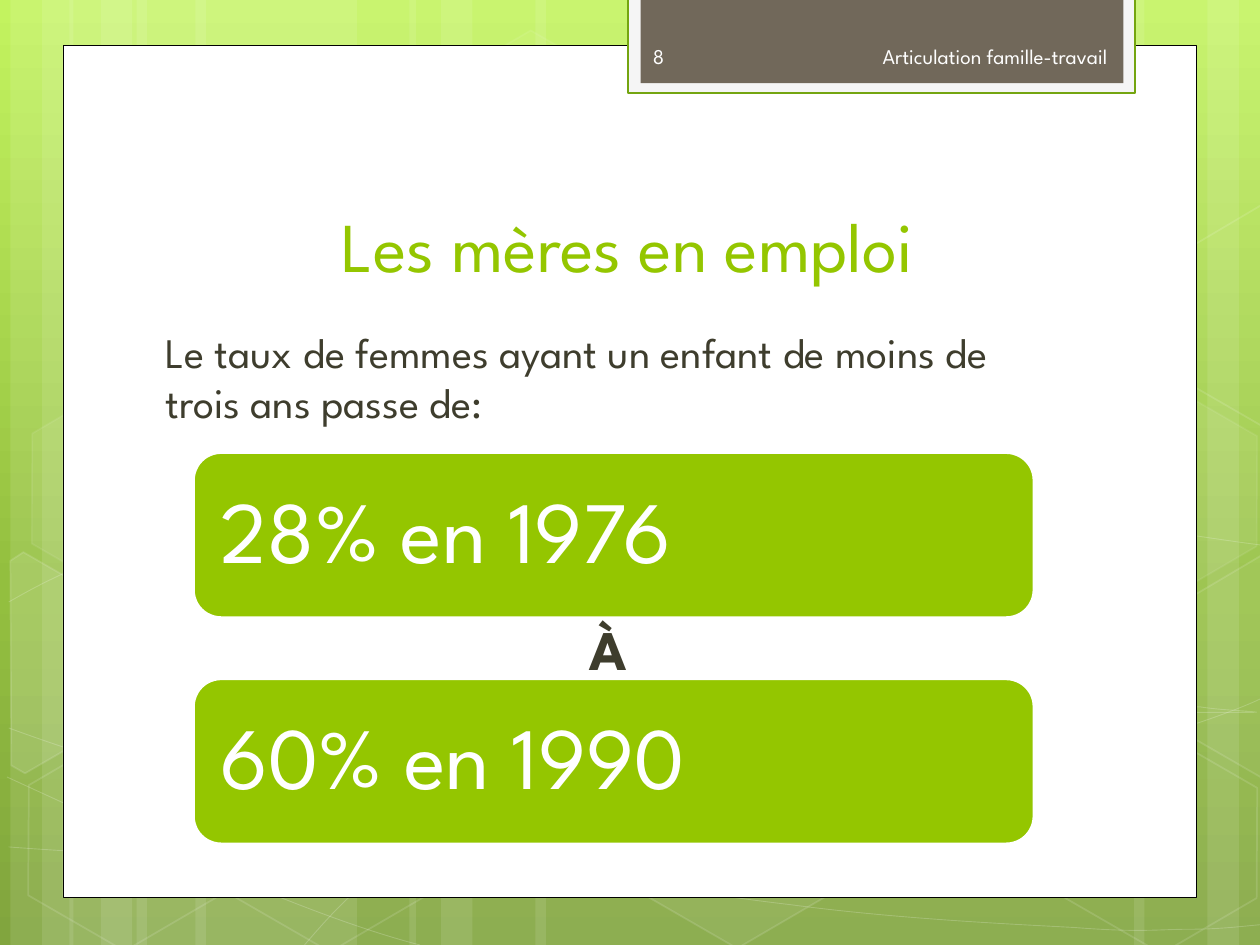
from copy import deepcopy
from math import cos, radians, sin
from pptx import Presentation
from pptx.dml.color import RGBColor
from pptx.enum.shapes import MSO_SHAPE as Preset
from pptx.enum.text import MSO_ANCHOR as Anchor, PP_ALIGN as Align
from pptx.oxml.ns import qn
from pptx.oxml.xmlchemy import OxmlElement
from pptx.util import Pt

COLORS = {
    "white": "FFFFFF", "black": "000000", "lime": "94C600", "edge": "74A510",
    "taupe": "71685A", "mist": "F5F5F5", "ink": "3E3D2D", "header": "FEFEFE",
    "top": "C3F35F", "middle": "93BF3F", "bottom": "81A53E",
}
FONT = "League Spartan"
GRADIENT = [("top", 0), ("middle", 62), ("bottom", 100)]
TILT = 30

TITLE = "Les mères en emploi"
INTRO = "Le taux de femmes ayant un enfant de moins de trois ans passe de:"
LINK = "À "
CARDS = ["28% en 1976", "60% en 1990"]
HEADER = [
    ("8", (366, 17.7, 105, 28.8), Align.LEFT),
    ("Articulation famille-travail", (472.3, 17.7, 167.75, 28.8), Align.RIGHT),
]

BARS = [
    (78, 126), (6, 36), (24, 60), (111.6, 126), (39.6, 36), (57.6, 60),
    (528, 126), (690, 36), (648, 60), (306, 222), (234, 36), (252, 60),
]
CURVES = [
    [(5, 484.5), (44, 487), (83, 489), (137, 488), (191, 487), (258, 486), (330, 479),
     (402, 471.5), (504, 458), (570, 444), (636, 430), (703, 409), (725, 397)],
    [(5, 343.5), (26, 332), (47, 321), (87, 310), (128, 300), (186.5, 284), (250, 279),
     (314, 273.5), (392, 273), (471, 279), (550, 284.5), (682, 307), (725, 312.5)],
    [(4, 444), (91, 484), (178, 523.5), (240.5, 539.5)],
    [(5, 416), (27, 424), (50, 432), (92, 443.5), (134, 454), (197, 472), (257, 484.5),
     (317, 497), (392, 510), (452, 517), (512, 525), (576, 528), (614, 530),
     (652, 533), (662, 531), (680, 531), (699, 531), (712, 529), (725, 528.5)],
    [(174, 539.5), (187, 525), (200, 510.5), (217.5, 497.5), (235, 484.5), (259, 470),
     (279, 460), (299.5, 450), (312, 446), (338, 438.5), (364, 431), (412.5, 421),
     (438, 416), (464, 411), (467, 411), (490, 409.5), (512, 407.5), (547, 405),
     (572, 404.5), (597, 404), (638, 404.5), (638, 404.5), (654, 404.5), (670, 404.5),
     (686, 404.5), (699, 405.5), (711, 406), (718, 407), (724, 407.5)],
]
HEXAGONS = [
    (240.5, 26, 4, 8), (358, 424, 6, 12), (8, 425.5, 0, 12), (10, 224.5, 7, 8),
    (125.3, 426, 0, 12), (542, 326, 10, 12), (600.5, 427, 0, 12), (600.5, 226, 7, 8),
]
CUT_HEXAGONS = [
    ((25.9, 385.2), 10, [(6, 320.5), (13.7, 315.4), (69, 347), (68.4, 410.4), (14.4, 442), (6, 437)]),
    ((709.2, 374.4), 4, [(666.7, 349), (720.7, 317.5), (726.5, 321), (726.5, 441.4),
                         (721.4, 444.2), (666.7, 412.6)]),
    ((709.2, 173.5), 0, [(666.7, 149), (720.7, 117.4), (727, 121), (726.5, 241.2),
                         (721.4, 244), (666.7, 212.4)]),
]


def rgb(name):
    return RGBColor.from_string(COLORS[name])


def set_alpha(fill_element, percent):
    alpha = OxmlElement("a:alpha")
    alpha.set("val", str(percent * 1000))
    fill_element.find(qn("a:srgbClr")).append(alpha)


def style(shape, fill=None, fill_alpha=100, line=None, width=1, line_alpha=100):
    shape.shadow.inherit = False
    properties = shape._element.spPr
    if fill and fill_alpha:
        shape.fill.solid()
        shape.fill.fore_color.rgb = rgb(fill)
        if fill_alpha < 100:
            set_alpha(properties.find(qn("a:solidFill")), fill_alpha)
    else:
        shape.fill.background()
    if line:
        shape.line.color.rgb = rgb(line)
        shape.line.width = Pt(width)
        if line_alpha < 100:
            set_alpha(properties.find(qn("a:ln")).find(qn("a:solidFill")), line_alpha)
    else:
        shape.line.fill.background()
    return shape


def add_preset(page, preset, frame, **look):
    return style(page.shapes.add_shape(preset, *map(Pt, frame)), **look)


def add_outline(page, points, close, **look):
    builder = page.shapes.build_freeform(*points[0], scale=float(Pt(1)))
    builder.add_line_segments(points[1:], close=close)
    return style(builder.convert_to_shape(), **look)


def bend(shape):
    outline = shape._element.find(".//" + qn("a:path"))
    lines = outline.findall(qn("a:lnTo"))
    for start in range(0, len(lines), 3):
        curve = OxmlElement("a:cubicBezTo")
        for line in lines[start:start + 3]:
            curve.append(line[0])
            outline.remove(line)
        outline.append(curve)


def turn_back(points, center):
    x, y = center
    c, s = cos(radians(TILT)), sin(radians(TILT))
    return [(x + (a - x) * c + (b - y) * s, y - (a - x) * s + (b - y) * c) for a, b in points]


def write(box, text, size=12, color="white", align=Align.LEFT, anchor=Anchor.TOP, bold=False,
          before=0, indent=0, spacing=None, inset=(7.2, 3.6), more=False):
    frame = box.text_frame
    frame.word_wrap = True
    frame.vertical_anchor = anchor
    frame.margin_left = frame.margin_right = Pt(inset[0])
    frame.margin_top = frame.margin_bottom = Pt(inset[1])
    para = frame.add_paragraph() if more else frame.paragraphs[0]
    para.alignment = align
    para.space_before = Pt(before)
    if spacing:
        para.line_spacing = spacing
    if indent:
        properties = para._p.get_or_add_pPr()
        properties.set("marL", str(Pt(indent)))
        properties.set("indent", "0")
    span = para.add_run()
    span.text = text
    span.font.name = FONT
    span.font.size = Pt(size)
    span.font.bold = bold
    span.font.color.rgb = rgb(color)


def paint_background(page):
    fill = page.background.fill
    fill.gradient()
    fill.gradient_angle = 270
    stops = page._element.find(".//" + qn("a:gsLst"))
    stops.insert(1, deepcopy(stops[0]))
    for stop, (color, position) in zip(fill.gradient_stops, GRADIENT):
        stop.color.rgb = rgb(color)
        stop.position = position / 100


def add_decor(page):
    for left, width in BARS:
        add_preset(page, Preset.RECTANGLE, (left, 0, width, 540), fill="white", fill_alpha=10)
    for points in CURVES:
        bend(add_outline(page, points, False, line="white", width=0.5, line_alpha=20))
    for left, top, fill_alpha, line_alpha in HEXAGONS:
        hexagon = add_preset(page, Preset.HEXAGON, (left, top, 126, 109.4), fill="white",
                             fill_alpha=fill_alpha, line="white", line_alpha=line_alpha)
        hexagon.adjustments[0] = 0.285
        hexagon.rotation = TILT
    for center, fill_alpha, points in CUT_HEXAGONS:
        piece = add_outline(page, turn_back(points, center), True, fill="white",
                            fill_alpha=fill_alpha, line="white", line_alpha=12)
        piece.rotation = TILT


def main():
    deck = Presentation()
    deck.slide_width, deck.slide_height = Pt(720), Pt(540)
    page = deck.slides.add_slide(deck.slide_layouts[5])
    paint_background(page)
    add_decor(page)

    add_preset(page, Preset.RECTANGLE, (36, 26, 648, 487), fill="white", line="black", width=0.5)
    add_preset(page, Preset.RECTANGLE, (359, -1.5, 289.5, 54.7), fill="mist", line="edge", width=1.25)
    add_preset(page, Preset.RECTANGLE, (366, -1.5, 276, 49), fill="taupe")

    title = page.shapes.title
    title.left, title.top, title.width, title.height = map(Pt, (82, 77.5, 553, 90))
    write(title, TITLE, size=40, color="lime", align=Align.CENTER, anchor=Anchor.BOTTOM)
    page.shapes._spTree.append(title._element)

    body = page.shapes.add_textbox(*map(Pt, (82.4, 183, 533.5, 276.5)))
    write(body, INTRO, size=24, color="ink", before=4.8, indent=5)
    write(body, LINK, size=32, color="ink", align=Align.CENTER, bold=True,
          before=107, indent=5, more=True)

    for text, frame, align in HEADER:
        box = page.shapes.add_textbox(*map(Pt, frame))
        write(box, text, color="header", align=align, anchor=Anchor.MIDDLE)

    for row, text in enumerate(CARDS):
        card = add_preset(page, Preset.ROUNDED_RECTANGLE, (110.7, 258.8 + 129.3 * row, 480, 94),
                          fill="lime", line="white", width=1.25)
        write(card, text, size=50, anchor=Anchor.MIDDLE, spacing=0.9, inset=(10.5, 10.5))

    deck.save("out.pptx")


if __name__ == "__main__":
    main()
